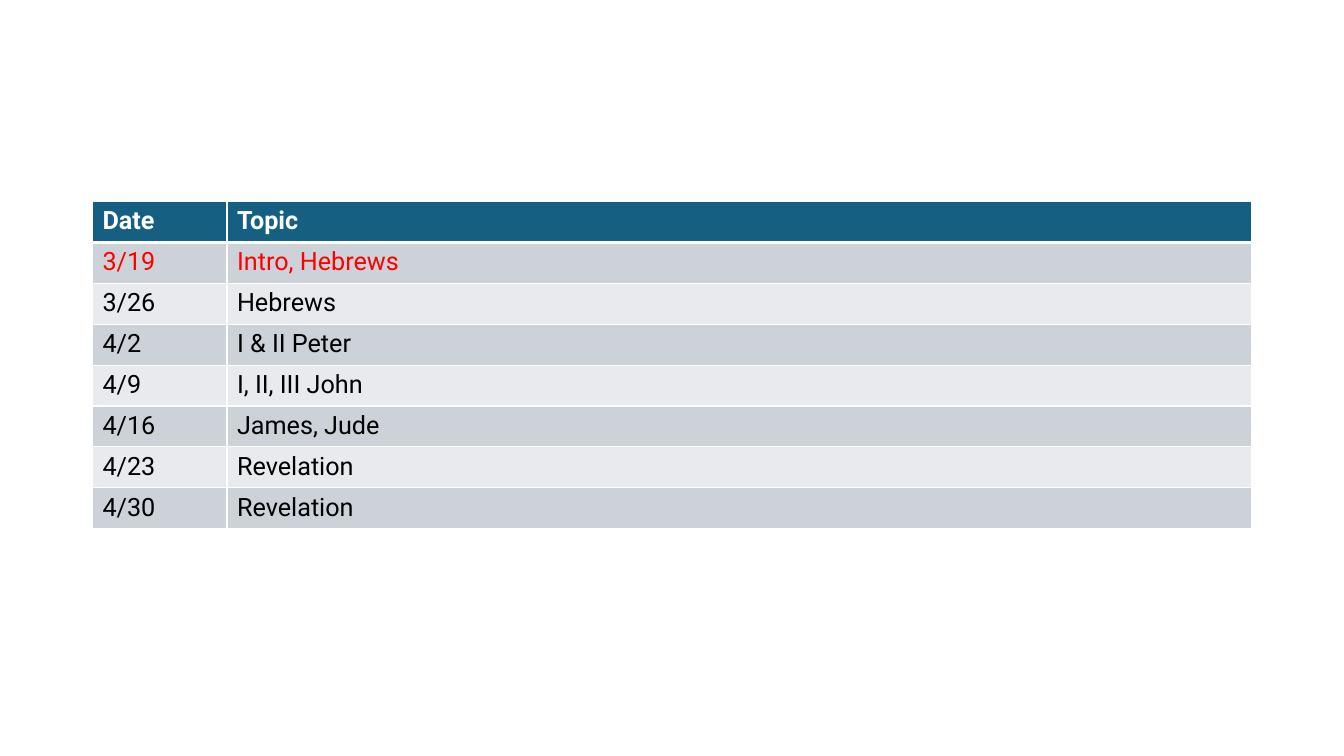
"""Build a slide with a table of class dates and topics."""
from lxml import etree
from pptx import Presentation
from pptx import util as u
from pptx.dml.color import RGBColor
from pptx.oxml import ns

ROWS = [
    ("Date", "Topic"),
    ("3/19", "Intro, Hebrews"),
    ("3/26", "Hebrews"),
    ("4/2", "I & II Peter"),
    ("4/9", "I, II, III John"),
    ("4/16", "James, Jude"),
    ("4/23", "Revelation"),
    ("4/30", "Revelation"),
]
COLORS = {"head": "156082", "odd": "CCD2D8", "even": "E8EAED",
          "white": "FFFFFF", "now": "FF0000", "ink": "000000"}
FONT = {"name": "Roboto", "size": u.Pt(18)}
WIDTHS = (3.39, 25.82)
LEFT, TOP, HIGH = 2.33, 5.08, 1.03
NOW = 1


def border(cell, row):
    """Rule the cell in white, with a thick line below the header."""
    props = cell._tc.get_or_add_tcPr()
    thick = {"T": row == 1, "B": row == 0}
    for spot, side in enumerate("LRTB"):
        line = etree.Element(ns.qn(f"a:ln{side}"))
        line.set("w", str(u.Pt(3 if thick.get(side) else 1)))
        fill = etree.SubElement(line, ns.qn("a:solidFill"))
        etree.SubElement(fill, ns.qn("a:srgbClr"), val=COLORS["white"])
        props.insert(spot, line)


def style(cell, row, words):
    """Write the words and colour the cell by its row."""
    back = "head" if row == 0 else "odd" if row % 2 else "even"
    ink = {0: "white", NOW: "now"}.get(row, "ink")
    cell.fill.solid()
    cell.fill.fore_color.rgb = RGBColor.from_string(COLORS[back])
    run = cell.text_frame.paragraphs[0].add_run()
    run.text = words
    for key, value in {**FONT, "bold": row == 0}.items():
        setattr(run.font, key, value)
    run.font.color.rgb = RGBColor.from_string(COLORS[ink])
    border(cell, row)


def main():
    """Lay out the table and save the slide."""
    deck = Presentation()
    deck.slide_width, deck.slide_height = u.Cm(33.87), u.Cm(19.05)
    slide = deck.slides.add_slide(deck.slide_layouts[6])
    table = slide.shapes.add_table(
        len(ROWS), len(WIDTHS), u.Cm(LEFT), u.Cm(TOP),
        u.Cm(sum(WIDTHS)), u.Cm(HIGH * len(ROWS))).table
    for col, width in zip(table.columns, WIDTHS):
        col.width = u.Cm(width)
    for row, line in enumerate(ROWS):
        table.rows[row].height = u.Cm(HIGH)
        for col, words in enumerate(line):
            style(table.cell(row, col), row, words)
    deck.save("out.pptx")


if __name__ == "__main__":
    main()
